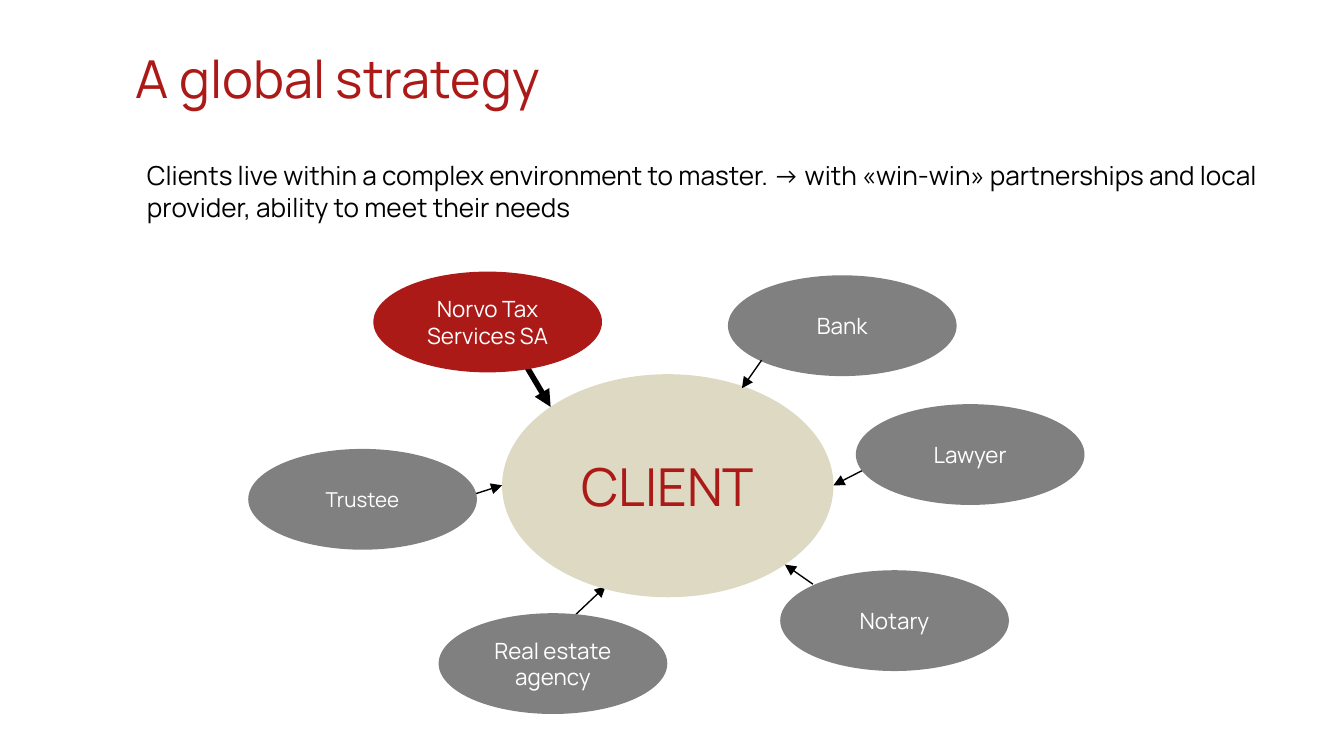
from lxml import etree
from pptx import Presentation
from pptx.dml.color import RGBColor
from pptx.enum.shapes import MSO_CONNECTOR, MSO_SHAPE
from pptx.enum.text import MSO_ANCHOR, MSO_AUTO_SIZE, PP_ALIGN
from pptx.oxml.ns import qn
from pptx.util import Pt

OVAL = MSO_SHAPE.OVAL
LINE = MSO_CONNECTOR.STRAIGHT
TOP, MIDDLE = MSO_ANCHOR.TOP, MSO_ANCHOR.MIDDLE
LEFT, CENTER = PP_ALIGN.LEFT, PP_ALIGN.CENTER
FIXED = MSO_AUTO_SIZE.NONE

FONT = "Manrope"
RED = RGBColor(0xAC, 0x1A, 0x18)
BLACK = RGBColor(0, 0, 0)
WHITE = RGBColor(0xFF, 0xFF, 0xFF)
GREY = RGBColor(0x80, 0x80, 0x80)
SAND = RGBColor(0xDD, 0xD9, 0xC3)

WIDE, HIGH = 122.5, 54
TITLE = "A global strategy"
INTRO = ("Clients live within a complex environment to master. → with «win-win» "
         "partnerships and local provider, ability to meet their needs")
NODES = [
    ("Bank", 390, 147.5, GREY, 12),
    ("Lawyer", 458.5, 216.5, GREY, 12),
    ("Norvo Tax Services SA", 200, 145.5, RED, 12),
    ("Trustee", 133, 240.5, GREY, 11),
    ("Real estate agency", 235, 328.5, GREY, 12),
    ("Notary", 418, 305.5, GREY, 12),
]
UNDER = [
    (305, 332.5, 324.5, 314, 0.75),
    (465, 250.5, 446.5, 260, 0.75),
    (247, 267, 269, 260, 0.75),
    (281, 194.5, 295, 218, 3),
]
OVER = [
    (435.5, 313, 420.5, 302.5, 0.75),
    (408, 193, 397.5, 208, 0.75),
]


def write(shape, text, size, color, align, anchor):
    """Put one formatted run of text into a shape."""
    frame = shape.text_frame
    frame.word_wrap = True
    frame.auto_size = FIXED
    frame.vertical_anchor = anchor
    para = frame.paragraphs[0]
    para.alignment = align
    para.space_before = Pt(0)
    run = para.add_run()
    run.text = text
    run.font.name = FONT
    run.font.size = Pt(size)
    run.font.color.rgb = color
    return para


def place(shape, left, top, width, height):
    """Move and size a shape."""
    shape.left, shape.top = Pt(left), Pt(top)
    shape.width, shape.height = Pt(width), Pt(height)


def plain(para):
    """Take the bullet and indent off a paragraph."""
    props = para._p.get_or_add_pPr()
    props.set("marL", "0")
    props.set("indent", "0")
    etree.SubElement(props, qn("a:buNone"))


def oval(slide, box, fill, text, size, color):
    """Add a filled ellipse with centred text."""
    shape = slide.shapes.add_shape(OVAL, *map(Pt, box))
    shape.shadow.inherit = False
    shape.fill.solid()
    shape.fill.fore_color.rgb = fill
    shape.line.fill.background()
    write(shape, text, size, color, CENTER, MIDDLE)


def arrow(slide, x1, y1, x2, y2, weight):
    """Add a black line with an arrowhead at its end."""
    link = slide.shapes.add_connector(LINE, Pt(x1), Pt(y1), Pt(x2), Pt(y2))
    link.line.color.rgb = BLACK
    link.line.width = Pt(weight)
    etree.SubElement(link.line._get_or_add_ln(), qn("a:tailEnd"), type="triangle")
    etree.SubElement(link._element.spPr, qn("a:effectLst"))


def main():
    """Build the slide and save it."""
    deck = Presentation()
    deck.slide_width, deck.slide_height = Pt(720), Pt(405)
    slide = deck.slides.add_slide(deck.slide_layouts[1])
    title, body = slide.placeholders
    place(title, 65.5, 21, 635, 41)
    write(title, TITLE, 28, RED, LEFT, TOP)
    place(body, 71.5, 82, 623, 41)
    plain(write(body, INTRO, 14, BLACK, LEFT, TOP))

    for ends in UNDER:
        arrow(slide, *ends)
    oval(slide, (269, 200.5, 177.5, 119.5), SAND, "CLIENT", 28, RED)
    for name, left, top, fill, size in NODES:
        oval(slide, (left, top, WIDE, HIGH), fill, name, size, WHITE)
    for ends in OVER:
        arrow(slide, *ends)
    deck.save("out.pptx")


if __name__ == "__main__":
    main()
